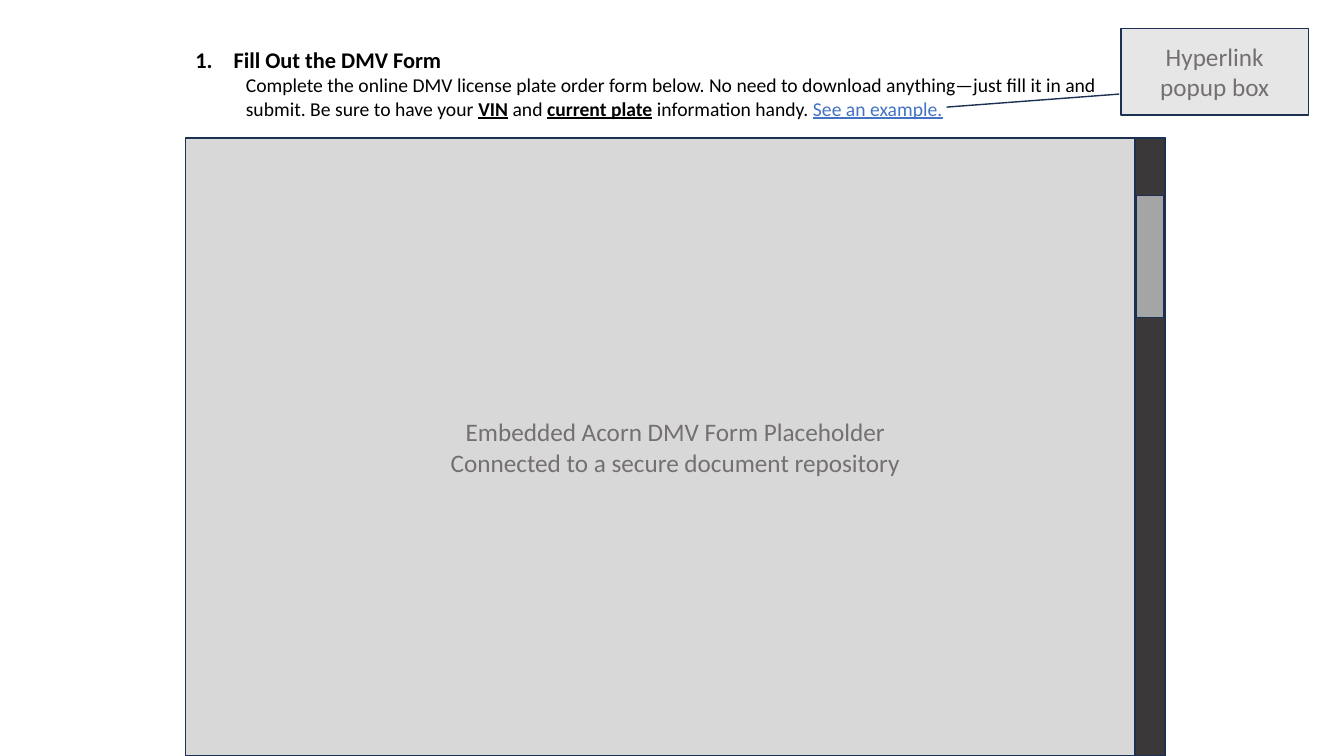
from dataclasses import dataclass

from lxml.etree import SubElement
from pptx import Presentation
from pptx.dml.color import RGBColor
from pptx.enum.shapes import MSO_SHAPE
from pptx.enum.text import MSO_ANCHOR, PP_ALIGN
from pptx.oxml.ns import qn
from pptx.util import Inches, Pt


@dataclass(frozen=True)
class Theme:
    font: str = "Calibri"
    ink: str = "000000"
    link: str = "4472C4"
    muted: str = "757070"
    outline: str = "1C3052"
    panel: str = "D8D8D8"
    rail: str = "3A3838"
    thumb: str = "A5A5A5"
    popup: str = "E7E6E6"
    heading_size: int = 16
    body_size: int = 14
    label_size: int = 18
    line_width: int = 1


class Wireframe:
    def __init__(self, deck, theme):
        self.deck = deck
        self.theme = theme
        self.page = deck.slides.add_slide(deck.slide_layouts[6])

    def frame(self, left, top, width, height):
        across, down = self.deck.slide_width, self.deck.slide_height
        return [round(share * full / 100) for share, full in
                ((left, across), (top, down), (width, across), (height, down))]

    def style(self, para, size, color):
        para.font.name = self.theme.font
        para.font.size = Pt(size)
        para.font.color.rgb = RGBColor.from_string(color)

    def block(self, area, fill, lines=(), kind=MSO_SHAPE.RECTANGLE):
        box = self.page.shapes.add_shape(kind, *self.frame(*area))
        box.shadow.inherit = False
        box.fill.solid()
        box.fill.fore_color.rgb = RGBColor.from_string(fill)
        box.line.color.rgb = RGBColor.from_string(self.theme.outline)
        box.line.width = Pt(self.theme.line_width)
        if lines:
            text = box.text_frame
            text.word_wrap = True
            text.vertical_anchor = MSO_ANCHOR.MIDDLE
            text.text = "\n".join(lines)
            for para in text.paragraphs:
                para.alignment = PP_ALIGN.CENTER
                self.style(para, self.theme.label_size, self.theme.muted)
        return box

    def callout(self, area, lines, pointer):
        box = self.block(area, self.theme.popup, lines, MSO_SHAPE.LINE_CALLOUT_1)
        for index, share in enumerate(pointer):
            box.adjustments[index] = share

    def step(self, area, heading, spans):
        box = self.page.shapes.add_textbox(*self.frame(*area))
        text = box.text_frame
        text.word_wrap = True

        title = text.paragraphs[0]
        title.text = heading
        properties = title._p.get_or_add_pPr()
        properties.set("marL", str(Inches(0.38)))
        properties.set("indent", str(Inches(-0.38)))
        SubElement(properties, qn("a:buFont"), typeface="+mj-lt")
        SubElement(properties, qn("a:buAutoNum"), type="arabicPeriod")
        self.style(title, self.theme.heading_size, self.theme.ink)
        title.font.bold = True

        para = text.add_paragraph()
        para.level = 1
        properties = para._p.get_or_add_pPr()
        properties.set("marL", str(Inches(0.5)))
        properties.set("indent", "0")
        self.style(para, self.theme.body_size, self.theme.ink)
        for words, role in spans:
            span = para.add_run()
            span.text = words
            if role:
                span.font.underline = True
            if role == "key":
                span.font.bold = True
            if role == "link":
                span.font.color.rgb = RGBColor.from_string(self.theme.link)

    def scrolling_panel(self, area, lines, rail_width, thumb_top, thumb_height):
        left, top, width, height = area
        rail_left = left + width - rail_width
        inset = 0.08
        self.block(area, self.theme.panel, lines)
        self.block((rail_left, top, rail_width, height), self.theme.rail)
        self.block((rail_left + inset, thumb_top, rail_width - 2 * inset, thumb_height),
                   self.theme.thumb)


def main():
    deck = Presentation()
    deck.slide_width, deck.slide_height = Inches(13.33), Inches(7.5)
    wireframe = Wireframe(deck, Theme())
    left, width, panel_top = 13.8, 72.9, 18.27

    wireframe.step((left, 5.47, width, 11.2), "Fill Out the DMV Form", [
        ("Complete the online DMV license plate order form below. No need to download "
         "anything—just fill it in and submit. Be sure to have your ", None),
        ("VIN", "key"),
        (" and ", None),
        ("current plate", "key"),
        (" information handy. ", None),
        ("See an example.", "link"),
    ])
    wireframe.scrolling_panel(
        (left, panel_top, width, 100 - panel_top),
        ["Embedded Acorn DMV Form Placeholder", "Connected to a secure document repository"],
        rail_width=2.25, thumb_top=25.87, thumb_height=16.13)
    wireframe.callout((83.4, 3.73, 13.95, 11.47), ["Hyperlink popup box"],
                      pointer=(0.76, -0.01, 0.91, -0.93))
    deck.save("out.pptx")


if __name__ == "__main__":
    main()
